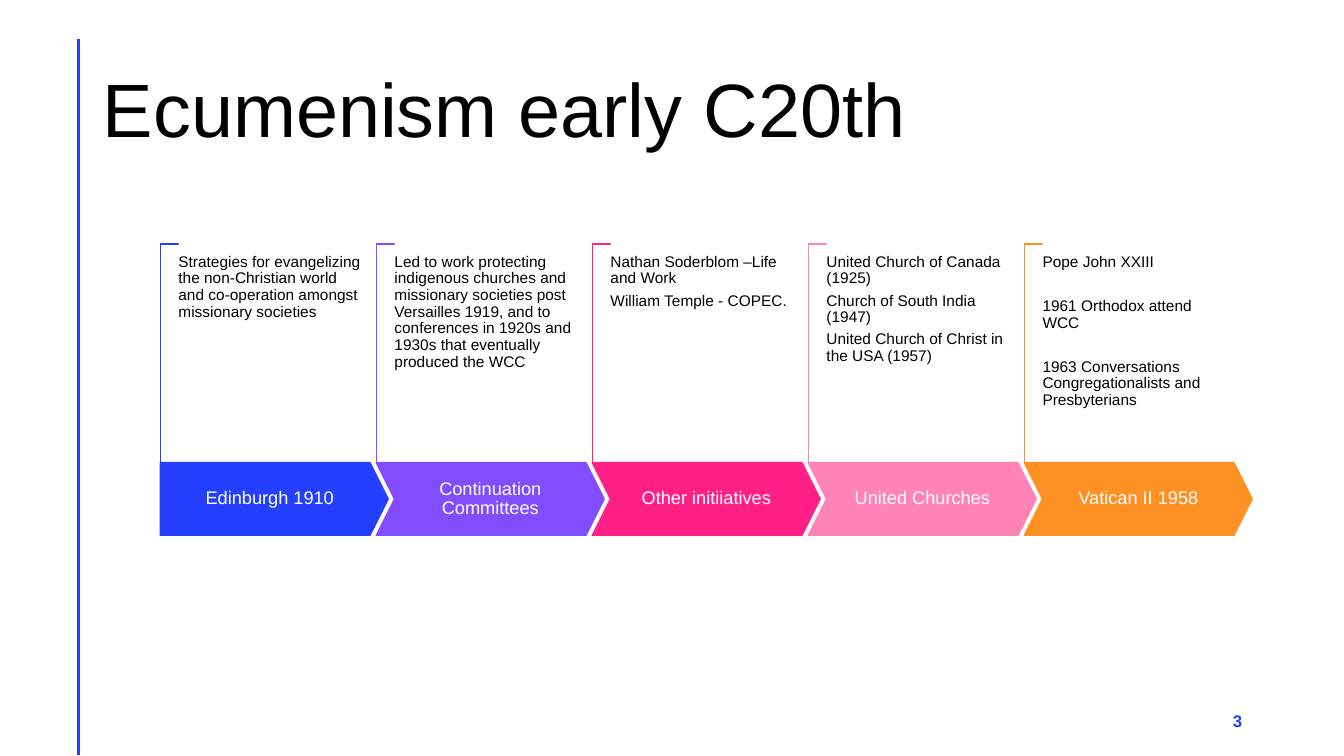
from lxml.etree import SubElement
from pptx import Presentation
from pptx.dml.color import RGBColor
from pptx.enum.shapes import MSO_CONNECTOR, MSO_SHAPE
from pptx.enum.text import MSO_ANCHOR, MSO_AUTO_SIZE, PP_ALIGN
from pptx.oxml.ns import qn
from pptx.util import Inches, Pt

COLORS = {
    "blue": "243FFF",
    "violet": "814DFF",
    "magenta": "FF1F85",
    "pink": "FF83B6",
    "orange": "FF9022",
    "white": "FFFFFF",
    "black": "000000",
}
STAGES = [
    ("Edinburgh 1910", "blue", 3.85, [
        "Strategies for evangelizing the non-Christian world "
        "and co-operation amongst missionary societies"]),
    ("Continuation Committees", "violet", 3.85, [
        "Led to work protecting indigenous churches and missionary societies "
        "post Versailles 1919, and to conferences in 1920s and 1930s "
        "that eventually produced the WCC"]),
    ("Other initiiatives", "magenta", 3.85, [
        "Nathan Soderblom –Life and Work",
        "William Temple - COPEC."]),
    ("United Churches", "pink", 3.85, [
        "United Church of Canada (1925)",
        "Church of South India (1947)",
        "United Church of Christ in the USA (1957)"]),
    ("Vatican II 1958", "orange", 19.6, [
        "Pope John XXIII",
        "1961 Orthodox attend WCC",
        "1963 Conversations Congregationalists and Presbyterians"]),
]
FIRST_LEFT, LAST_LEFT = 1.59, 10.16
STEP = (LAST_LEFT - FIRST_LEFT) / (len(STAGES) - 1)
ARROW_TOP, ARROW_WIDTH, ARROW_HEIGHT = 4.59, 2.26, 0.72
BRACKET_LENGTH, BRACKET_DEPTH = 2.17, 0.18


def write(frame, lines, size, color, align=PP_ALIGN.LEFT, line_spacing=0.9, gap=0):
    frame.word_wrap = True
    frame.auto_size = MSO_AUTO_SIZE.NONE
    frame.text = "\n".join(lines)
    for paragraph in frame.paragraphs:
        paragraph.alignment = align
        paragraph.line_spacing = line_spacing
        paragraph.space_before = Pt(0)
        paragraph.space_after = Pt(gap)
        paragraph.font.name = "Arial"
        paragraph.font.size = Pt(size)
        paragraph.font.color.rgb = RGBColor.from_string(COLORS[color])


def paint(shape, fill, line):
    shape.shadow.inherit = False
    shape.fill.solid()
    shape.fill.fore_color.rgb = RGBColor.from_string(COLORS[fill])
    shape.line.color.rgb = RGBColor.from_string(COLORS[line])
    shape.line.width = Pt(1)


prs = Presentation()
prs.slide_width, prs.slide_height = Inches(13.33), Inches(7.5)
slide = prs.slides.add_slide(prs.slide_layouts[5])
shapes = slide.shapes

margin_rule = shapes.add_connector(
    MSO_CONNECTOR.STRAIGHT, Inches(0.78), Inches(0.39), Inches(0.78), Inches(7.49))
margin_rule.line.color.rgb = RGBColor.from_string(COLORS["blue"])
margin_rule.line.width = Pt(2)
SubElement(margin_rule._element.spPr, qn("a:effectLst"))

title = shapes.title
title.left, title.top = Inches(0.92), Inches(0.4)
title.width, title.height = Inches(11.5), Inches(1.45)
title.text_frame.vertical_anchor = MSO_ANCHOR.MIDDLE
write(title.text_frame, ["Ecumenism early C20th"], 54, "black")

page_number = shapes.add_textbox(Inches(9.42), Inches(6.95), Inches(3), Inches(0.4)).text_frame
page_number.vertical_anchor = MSO_ANCHOR.MIDDLE
write(page_number, ["3"], 12, "blue", PP_ALIGN.RIGHT, 1, 6)
page_number.paragraphs[0].font.bold = True

for index, (heading, color, gap, notes) in enumerate(STAGES):
    left = FIRST_LEFT + index * STEP

    bracket = shapes.add_shape(
        MSO_SHAPE.CORNER,
        Inches(left + (BRACKET_DEPTH - BRACKET_LENGTH) / 2),
        Inches(ARROW_TOP - (BRACKET_LENGTH + BRACKET_DEPTH) / 2),
        Inches(BRACKET_LENGTH), Inches(BRACKET_DEPTH))
    bracket.rotation = 90
    bracket.adjustments[0] = bracket.adjustments[1] = 0.01
    paint(bracket, "white", color)

    arrow = shapes.add_shape(
        MSO_SHAPE.CHEVRON if index else MSO_SHAPE.PENTAGON,
        Inches(left), Inches(ARROW_TOP), Inches(ARROW_WIDTH), Inches(ARROW_HEIGHT))
    arrow.adjustments[0] = 0.25
    paint(arrow, color, color)
    label = arrow.text_frame
    label.margin_left = label.margin_right = Inches(0.09)
    label.margin_top = label.margin_bottom = Inches(0.1)
    label.vertical_anchor = MSO_ANCHOR.MIDDLE
    write(label, [heading], 13, "white", PP_ALIGN.CENTER)

    details = shapes.add_textbox(
        Inches(left + BRACKET_DEPTH), Inches(2.52), Inches(1.83), Inches(1.55)).text_frame
    details.margin_left = details.margin_right = 0
    details.margin_top = details.margin_bottom = 0
    write(details, notes, 11, "black", gap=gap)

prs.save("out.pptx")
